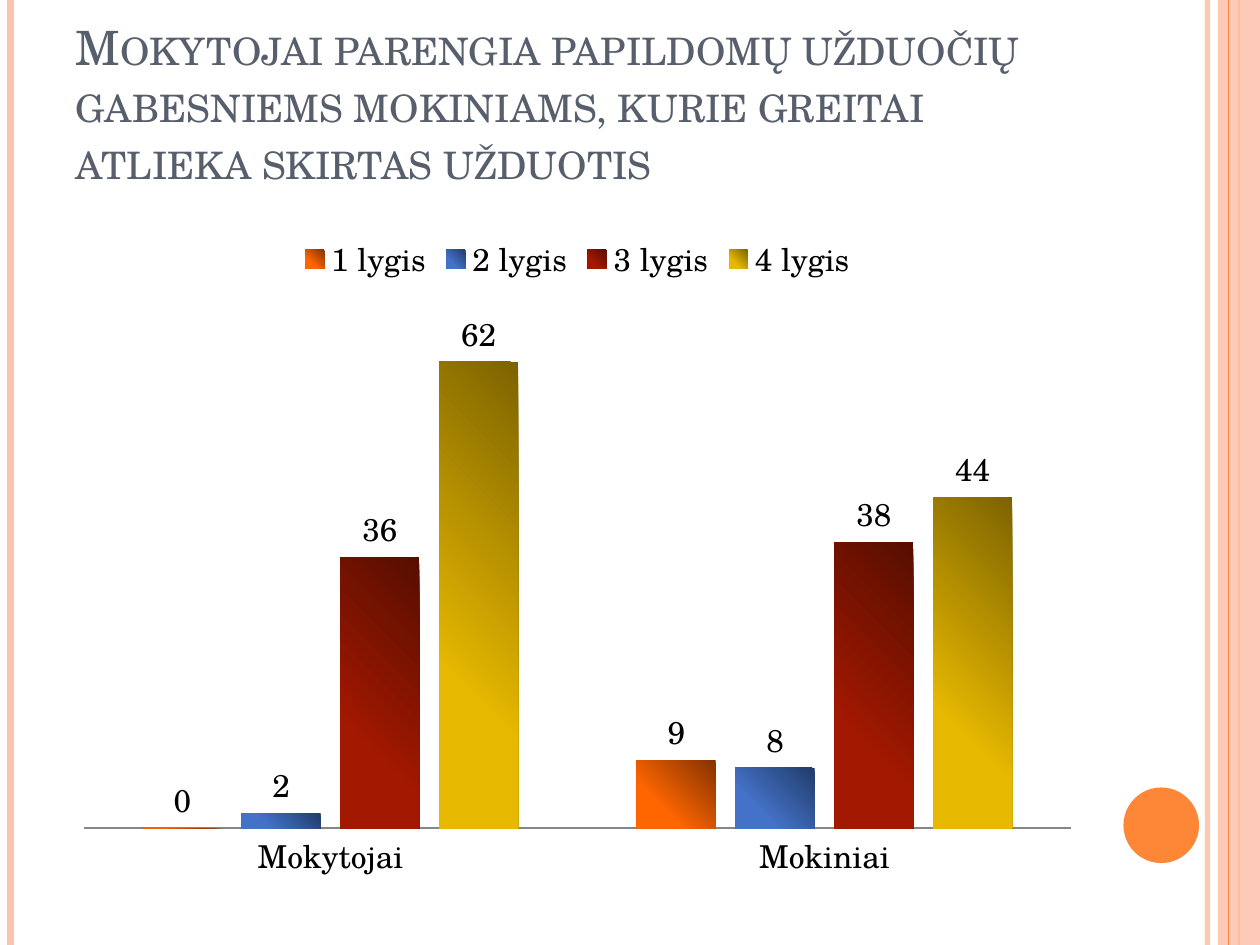
from lxml import etree
from pptx import Presentation
from pptx.chart import data
from pptx.dml import color
from pptx.enum import chart as kinds, shapes, text
from pptx.oxml import ns, parse_xml
from pptx.util import Pt

FONT = "TeX Gyre Schola"
PEACH, ORANGE = "FEC3AE", "FE8637"
TITLE = ("Mokytojai parengia papildomų užduočių gabesniems mokiniams, "
         "kurie greitai atlieka skirtas užduotis")
LEVELS = [
    ("1 lygis", (0, 9), "FF6600", "853300"),
    ("2 lygis", (2, 8), "4472C8", "213C6B"),
    ("3 lygis", (36, 38), "A31800", "570E00"),
    ("4 lygis", (62, 44), "E6B800", "7D6300"),
]


def rgb(code):
    return color.RGBColor.from_string(code)


def fade(fill, alpha):
    node = fill._xPr.find(".//" + ns.qn("a:srgbClr"))
    etree.SubElement(node, ns.qn("a:alpha"), val=str(alpha * 1000))


def rule(slide, x, code, width, alpha=100):
    line = slide.shapes.add_connector(
        shapes.MSO_CONNECTOR.STRAIGHT, Pt(x), 0, Pt(x), Pt(540))
    line.line.color.rgb = rgb(code)
    line.line.width = Pt(width)
    if alpha < 100:
        fade(line.line.fill, alpha)
    etree.SubElement(line._element.spPr, ns.qn("a:effectLst"))


def block(slide, kind, x, y, w, h, code, alpha=100):
    shape = slide.shapes.add_shape(kind, Pt(x), Pt(y), Pt(w), Pt(h))
    shape.shadow.inherit = False
    shape.fill.solid()
    shape.fill.fore_color.rgb = rgb(code)
    if alpha < 100:
        fade(shape.fill, alpha)
    shape.line.fill.background()


def frame(slide):
    rule(slide, 690, PEACH, 3, 93)
    rule(slide, 6, PEACH, 4.5)
    rule(slide, 708, ORANGE, 1.5)
    block(slide, shapes.MSO_SHAPE.RECTANGLE, 696, 0, 24, 540, PEACH, 87)
    rule(slide, 702, ORANGE, 0.75)
    block(slide, shapes.MSO_SHAPE.OVAL, 642, 450, 43.2, 43.2, ORANGE)


def head(slide):
    title = slide.shapes.title
    title.left, title.top, title.width, title.height = (
        Pt(36), Pt(21.6), Pt(588), Pt(90))
    box = title.text_frame
    box.text = TITLE
    box.word_wrap = True
    box.auto_size = text.MSO_AUTO_SIZE.NONE
    box.vertical_anchor = text.MSO_ANCHOR.BOTTOM
    box.paragraphs[0].alignment = text.PP_ALIGN.LEFT
    run = box.paragraphs[0].runs[0]
    run.font.name = FONT
    run.font.size = Pt(27)
    run.font.color.rgb = rgb("575F6D")
    run.font._element.set("cap", "small")


def glow(series, light, dark):
    stops = "".join(
        f'<a:gs pos="{pos}"><a:srgbClr val="{code}"/></a:gs>'
        for pos, code in ((0, light), (30000, light), (100000, dark)))
    props = series._element.get_or_add_spPr()
    props.insert(0, parse_xml(
        f'<a:gradFill {ns.nsdecls("a")} rotWithShape="1"><a:gsLst>{stops}</a:gsLst>'
        '<a:path path="circle"><a:fillToRect t="100000" r="100000"/></a:path>'
        '</a:gradFill>'))


def graph(slide):
    table = data.CategoryChartData()
    table.categories = ["Mokytojai", "Mokiniai"]
    for name, values, *_ in LEVELS:
        table.add_series(name, values)
    chart = slide.shapes.add_chart(
        kinds.XL_CHART_TYPE.COLUMN_CLUSTERED,
        Pt(36), Pt(126), Pt(588), Pt(384), table).chart
    chart.has_title = False
    chart.font.name = FONT
    chart.font.size = Pt(18)
    chart.font.color.rgb = rgb("000000")
    chart.has_legend = True
    chart.legend.position = kinds.XL_LEGEND_POSITION.TOP
    chart.legend.include_in_layout = False
    axis = chart.value_axis
    axis.minimum_scale, axis.maximum_scale = 0, 70
    axis.has_major_gridlines = False
    axis.visible = False
    base = chart.category_axis
    base.major_tick_mark = kinds.XL_TICK_MARK.NONE
    base.format.line.color.rgb = rgb("868686")
    plot = chart.plots[0]
    plot.gap_width, plot.overlap = 150, -25
    plot.vary_by_categories = False
    for series, (_, _, light, dark) in zip(plot.series, LEVELS):
        glow(series, light, dark)
        series.data_labels.show_value = True
        series.data_labels.position = kinds.XL_LABEL_POSITION.OUTSIDE_END


def main():
    deck = Presentation()
    deck.slide_width, deck.slide_height = Pt(720), Pt(540)
    slide = deck.slides.add_slide(deck.slide_layouts[5])
    frame(slide)
    head(slide)
    graph(slide)
    deck.save("out.pptx")


if __name__ == "__main__":
    main()
